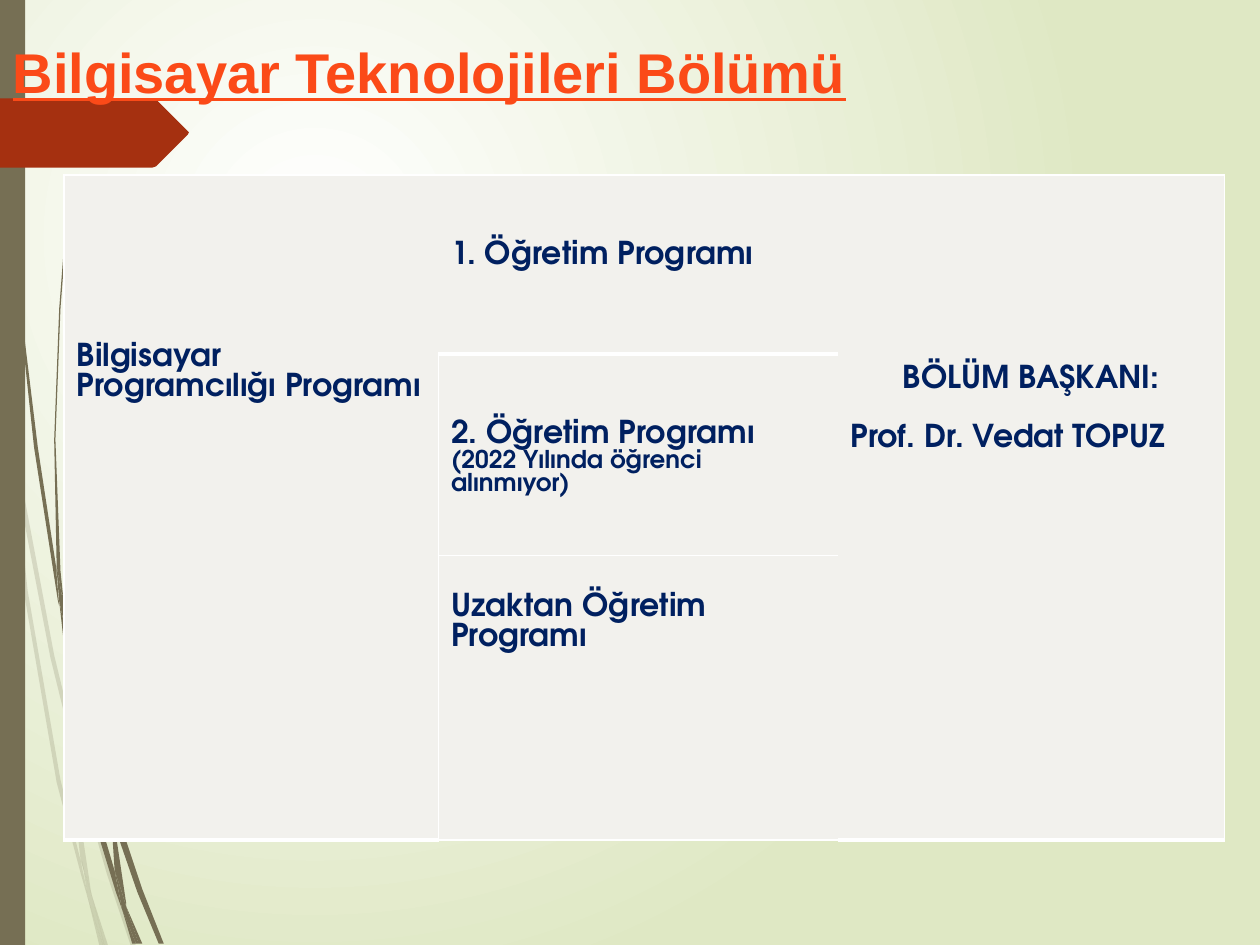
from dataclasses import dataclass

from lxml import etree
from pptx import Presentation
from pptx.dml.color import RGBColor
from pptx.enum.text import MSO_ANCHOR, PP_ALIGN
from pptx.oxml.ns import qn
from pptx.enum.shapes import MSO_SHAPE
from pptx.util import Inches, Pt

TOP, LEFT, CENTER = MSO_ANCHOR.TOP, PP_ALIGN.LEFT, PP_ALIGN.CENTER
RECTANGLE = MSO_SHAPE.RECTANGLE


@dataclass(frozen=True)
class Theme:
    olive: str = "766F54"
    rust: str = "A53010"
    white: str = "FFFFFF"
    green: str = "DFE8C4"
    cell: str = "F2F1ED"
    heading: str = "FB4A18"
    navy: str = "002060"
    title_font: str = "Arial"
    body_font: str = "TeX Gyre Adventor"
    title_size: int = 32
    body_size: int = 18
    note_size: int = 14


@dataclass(frozen=True)
class Line:
    text: str
    size: int
    align: int = LEFT
    before: float = 0


@dataclass(frozen=True)
class Cell:
    row: int
    col: int
    top: float      # inset above the first line, inches
    borders: dict   # side -> width in points
    lines: tuple
    rows: int = 1


THEME = Theme()
BODY, NOTE = THEME.body_size, THEME.note_size

# Outlines in hundredths of an inch
PALE_STRANDS = [
    [(8, 350), (6, 322), (0, 282), (0, 299), (7, 344)],
    [(40, 522), (59, 599), (59, 586), (43, 520), (10, 345), (12, 376)],
    [(64, 607), (61, 596), (61, 610), (85, 694), (104, 751), (108, 751), (88, 692)],
    [(83, 751), (86, 751), (73, 711)],
    [(64, 683), (48, 619), (22, 469), (12, 376), (8, 350), (19, 470), (45, 621),
     (64, 693), (70, 714), (69, 707)],
    [(58, 599), (60, 646), (64, 683), (67, 692), (73, 711), (72, 706), (63, 646),
     (61, 610), (61, 608)],
    [(70, 714), (79, 751), (82, 751)],
    [(67, 692), (65, 683), (69, 707), (70, 714), (82, 751), (83, 751), (73, 711)],
]
DARK_STRANDS = [
    [(5, 110), (14, 233), (27, 355), (46, 477), (47, 481), (45, 457), (45, 453),
     (30, 355), (15, 232), (6, 109), (4, 48), (3, 0), (2, 0), (3, 48)],
    [(94, 649), (91, 641), (91, 656), (109, 708), (126, 749), (130, 749), (113, 706)],
    [(91, 691), (81, 657), (60, 556), (53, 505), (47, 477), (56, 557), (77, 659),
     (92, 708), (97, 722), (96, 717)],
    [(50, 472), (48, 453), (44, 349), (48, 245), (52, 193), (58, 141), (51, 193),
     (47, 245), (43, 349), (45, 449), (49, 472)],
    [(110, 749), (113, 749), (100, 719)],
    [(47, 477), (53, 505), (50, 472), (49, 472), (45, 449), (45, 453)],
    [(97, 722), (105, 749), (108, 749)],
    [(88, 645), (91, 691), (96, 706), (100, 719), (100, 716), (91, 656), (90, 651)],
    [(96, 706), (91, 691), (96, 717), (97, 722), (108, 749), (110, 749), (100, 719)],
]
ARROW = [(149, 107), (124, 132), (121, 133), (0, 133), (0, 78), (121, 78),
         (124, 79), (149, 104), (150, 105)]

COLS, ROWS = (2.97, 3.17, 3.07), (1.42, 1.6, 2.23)
CELLS = [
    Cell(0, 0, 1.33, {"L": 1, "T": 1, "B": 3},
         (Line("Bilgisayar Programcılığı Programı", BODY),), rows=3),
    Cell(0, 1, 0.52, {"T": 1, "B": 3}, (Line("1. Öğretim Programı", BODY),)),
    Cell(0, 2, 1.5, {"T": 1, "R": 1, "B": 3},
         (Line("BÖLÜM BAŞKANI:", BODY, CENTER),
          Line("Prof. Dr. Vedat TOPUZ", BODY, before=16.7)), rows=3),
    Cell(1, 1, 0.52, {"L": 1, "T": 3, "B": 1},
         (Line("2. Öğretim Programı", BODY),
          Line("(2022 Yılında öğrenci alınmıyor)", NOTE))),
    Cell(2, 1, 0.29, {"L": 1, "T": 1, "B": 1},
         (Line("Uzaktan Öğretim Programı", BODY),)),
]


def rgb(color: str) -> RGBColor:
    return RGBColor.from_string(color)


def paint(sp, color: str, alpha: int = 100) -> None:
    sp.shadow.inherit = False
    sp.line.fill.background()
    sp.fill.solid()
    sp.fill.fore_color.rgb = rgb(color)
    if alpha < 100:
        clr = sp._element.spPr.find(qn("a:solidFill"))[0]
        etree.SubElement(clr, qn("a:alpha"), val=str(alpha * 1000))


def draw_outline(s, points: list, color: str, alpha: int = 100) -> None:
    builder = s.shapes.build_freeform(*points[0], scale=Inches(0.01))
    builder.add_line_segments(points[1:], close=True)
    paint(builder.convert_to_shape(), color, alpha)


def set_background(s) -> None:
    fill = s.background.fill
    fill.gradient()
    for stop, color in zip(fill.gradient_stops, (THEME.white, THEME.green)):
        stop.color.rgb = rgb(color)
    grad = s._element.find(".//" + qn("a:gradFill"))
    grad.remove(grad.find(qn("a:lin")))
    circle = etree.SubElement(grad, qn("a:path"), attrib={"path": "circle"})
    etree.SubElement(circle, qn("a:fillToRect"), l="50000", t="50000",
                     r="100000", b="100000")


def add_text(p, text: str, font: str, size: int, color: str):
    r = p.add_run()
    r.text = text
    r.font.name, r.font.size, r.font.bold = font, Pt(size), True
    r.font.color.rgb = rgb(color)
    return r


def set_borders(cell, borders: dict) -> None:
    tc_pr = cell._tc.get_or_add_tcPr()
    for i, side in enumerate("LRTB"):
        ln = etree.Element(qn("a:ln" + side), w=str(Pt(borders.get(side, 0))))
        if side in borders:
            fill = etree.SubElement(ln, qn("a:solidFill"))
            etree.SubElement(fill, qn("a:srgbClr"), val=THEME.white)
        else:
            etree.SubElement(ln, qn("a:noFill"))
        tc_pr.insert(i, ln)


def fill_cell(table, item: Cell) -> None:
    cell = table.cell(item.row, item.col)
    if item.rows > 1:
        cell.merge(table.cell(item.row + item.rows - 1, item.col))
    cell.fill.solid()
    cell.fill.fore_color.rgb = rgb(THEME.cell)
    cell.vertical_anchor, cell.margin_top = TOP, Inches(item.top)
    set_borders(cell, item.borders)
    tf = cell.text_frame
    for i, line in enumerate(item.lines):
        p = tf.add_paragraph() if i else tf.paragraphs[0]
        p.alignment, p.space_before = line.align, Pt(line.before)
        p.line_spacing = Pt(line.size * 0.95)
        add_text(p, line.text, THEME.body_font, line.size, THEME.navy)


def main() -> None:
    prs = Presentation()
    prs.slide_width, prs.slide_height = Inches(10), Inches(7.5)
    s = prs.slides.add_slide(prs.slide_layouts[5])
    set_background(s)

    # Grass strands, side bar and arrow
    for points in PALE_STRANDS:
        draw_outline(s, points, THEME.olive, 20)
    for points in DARK_STRANDS:
        draw_outline(s, points, THEME.olive)
    bar = s.shapes.add_shape(RECTANGLE, 0, 0, Inches(0.2), prs.slide_height)
    paint(bar, THEME.olive)
    draw_outline(s, ARROW, THEME.rust)

    # Title, in front of the side bar
    title = s.shapes.title
    title.left, title.top = Inches(0), Inches(0.21)
    title.width, title.height = Inches(10), Inches(0.54)
    s.shapes._spTree.append(title._element)
    tf = title.text_frame
    tf.vertical_anchor, tf.margin_top = TOP, Inches(0.09)
    p = tf.paragraphs[0]
    p.alignment = LEFT
    r = add_text(p, "Bilgisayar Teknolojileri Bölümü", THEME.title_font,
                 THEME.title_size, THEME.heading)
    r.font.underline = True

    # Programme table
    table = s.shapes.add_table(len(ROWS), len(COLS), Inches(0.51), Inches(1.39),
                               Inches(sum(COLS)), Inches(sum(ROWS))).table
    table.first_row = table.horz_banding = False
    for col, width in zip(table.columns, COLS):
        col.width = Inches(width)
    for row, height in zip(table.rows, ROWS):
        row.height = Inches(height)
    for item in CELLS:
        fill_cell(table, item)

    prs.save("out.pptx")


if __name__ == "__main__":
    main()
